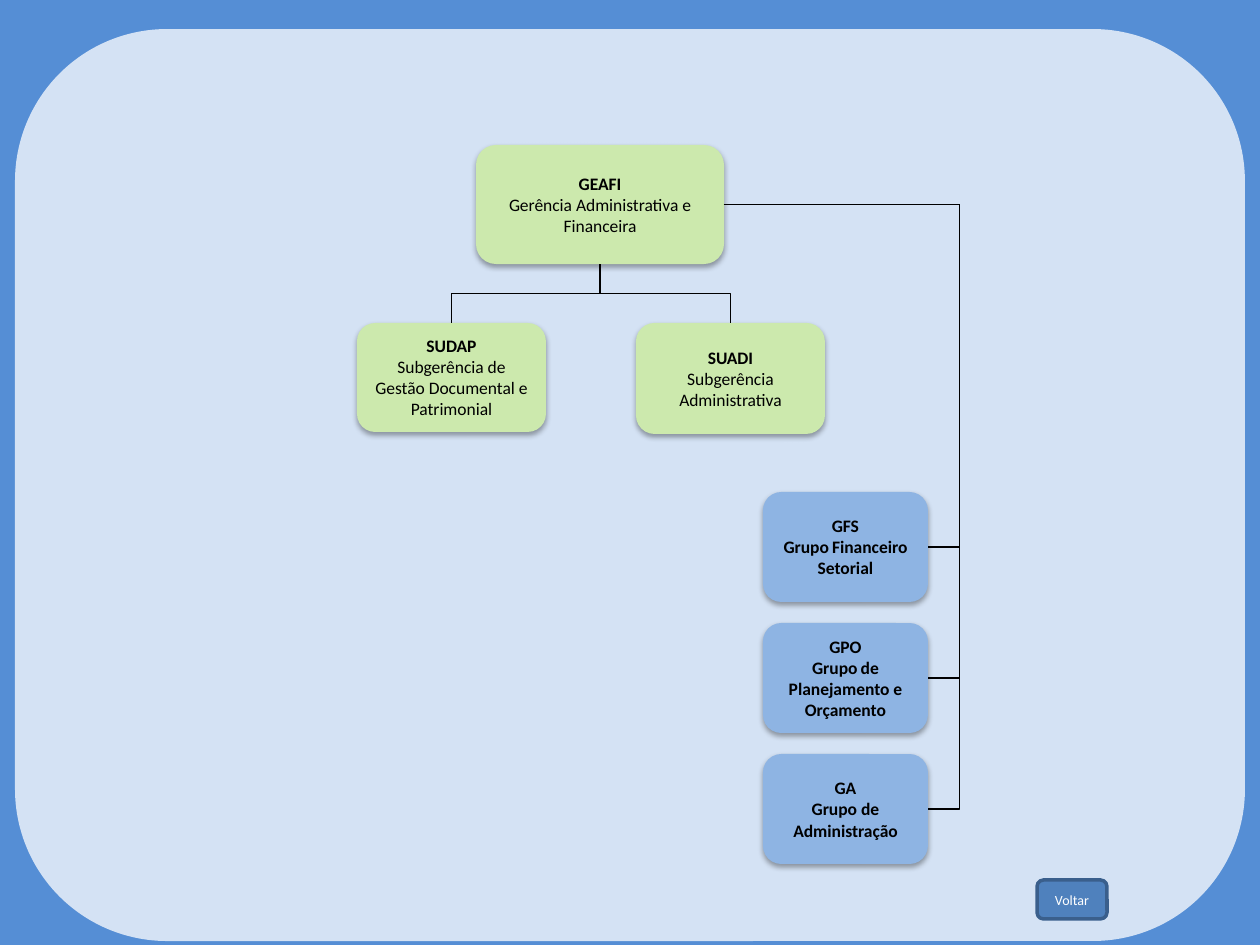
from lxml.etree import SubElement as Sub
from pptx import Presentation
from pptx.dml.color import RGBColor
from pptx.enum.shapes import MSO_CONNECTOR as Link, MSO_SHAPE as Shape
from pptx.enum.text import MSO_ANCHOR as Anchor, PP_ALIGN as Align
from pptx.oxml.ns import qn
from pptx.util import Pt

PX = 914400 / 126
BACK = RGBColor(0x55, 0x8E, 0xD5)
PANEL = RGBColor(0xD4, 0xE2, 0xF4)
GREEN = RGBColor(0xCC, 0xE9, 0xAD)
BLUE = RGBColor(0x8E, 0xB4, 0xE3)
STEEL = RGBColor(0x4F, 0x81, 0xBD)
EDGE = RGBColor(0x3A, 0x5F, 0x8C)
BLACK = RGBColor(0, 0, 0)
WHITE = RGBColor(255, 255, 255)

deck = Presentation()
deck.slide_width = round(1260 * PX)
deck.slide_height = round(945 * PX)
slide = deck.slides.add_slide(deck.slide_layouts[6])
slide.background.fill.solid()
slide.background.fill.fore_color.rgb = BACK


def add_box(left, top, width, height, fill, lines=(), color=BLACK, raised=True):
    box = slide.shapes.add_shape(
        Shape.ROUNDED_RECTANGLE, *(round(n * PX) for n in (left, top, width, height)))
    box.fill.solid()
    box.fill.fore_color.rgb = fill
    box.line.fill.background()
    box.shadow.inherit = False
    if raised:
        glow = Sub(box._element.spPr.find(qn("a:effectLst")), qn("a:outerShdw"),
                   blurRad="40000", dist="23000", dir="5400000", rotWithShape="0")
        tint = Sub(glow, qn("a:srgbClr"), val="000000")
        Sub(tint, qn("a:alpha"), val="35000")
    frame = box.text_frame
    frame.word_wrap = True
    frame.vertical_anchor = Anchor.MIDDLE
    for i, runs in enumerate(lines):
        para = frame.add_paragraph() if i else frame.paragraphs[0]
        para.alignment = Align.CENTER
        for text, size, bold in runs:
            run = para.add_run()
            run.text = text
            run.font.name = "Calibri"
            run.font.size = Pt(size)
            run.font.bold = bold
            run.font.color.rgb = color
    return box


def add_link(start, out, end, into):
    link = slide.shapes.add_connector(Link.ELBOW, 0, 0, 0, 0)
    link.begin_connect(start, out)
    link.end_connect(end, into)
    link.line.color.rgb = BLACK
    link.line.width = Pt(0.75)
    Sub(link._element.spPr, qn("a:effectLst"))
    return link


add_box(15, 29, 1230, 912, PANEL, raised=False)
head = add_box(476, 145, 248, 119, GREEN, [
    [("GEAFI", 10, True)],
    [("Gerência Administrativa e Financeira", 10, False)]])

subs = [
    (357, 109, "SUDAP", "Subgerência de Gestão Documental e Patrimonial"),
    (636, 111, "SUADI", "Subgerência Administrativa")]
for left, high, code, name in subs:
    box = add_box(left, 323, 189, high, GREEN,
                  [[(code, 10, True)], [(name, 10, False)]])
    link = add_link(head, 2, box, 0)
    x, y, wide, tall = link.left, link.top, link.width, link.height
    link.left = x + (wide - tall) // 2
    link.top = y + (tall - wide) // 2
    link.width, link.height = tall, wide
    frame = link._element.spPr.find(qn("a:xfrm"))
    frame.attrib.pop("flipH", None)
    if box.left < head.left:
        frame.set("rot", "5400000")
    else:
        frame.set("rot", "16200000")
        frame.set("flipH", "1")

groups = [
    ("GFS", [("Grupo", 10, True), (" ", 8, False), ("Financeiro Setorial", 10, True)]),
    ("GPO", [("Grupo", 10, True), (" ", 8, False),
             ("de Planejamento e Orçamento", 10, True)]),
    ("GA", [("Grupo de Administração", 10, True)])]
for i, (code, name) in enumerate(groups):
    box = add_box(763, 492 + 131 * i, 165, 110, BLUE, [[(code, 10, True)], name])
    link = add_link(head, 3, box, 3)
    bends = link._element.spPr.find(qn("a:prstGeom")).find(qn("a:avLst"))
    Sub(bends, qn("a:gd"), name="adj1", fmla="val 115400")

back = add_box(1037, 880, 70, 39, STEEL, [[("Voltar", 8, False)]], WHITE, False)
back.line.color.rgb = EDGE
back.line.width = Pt(2)

deck.save("out.pptx")
